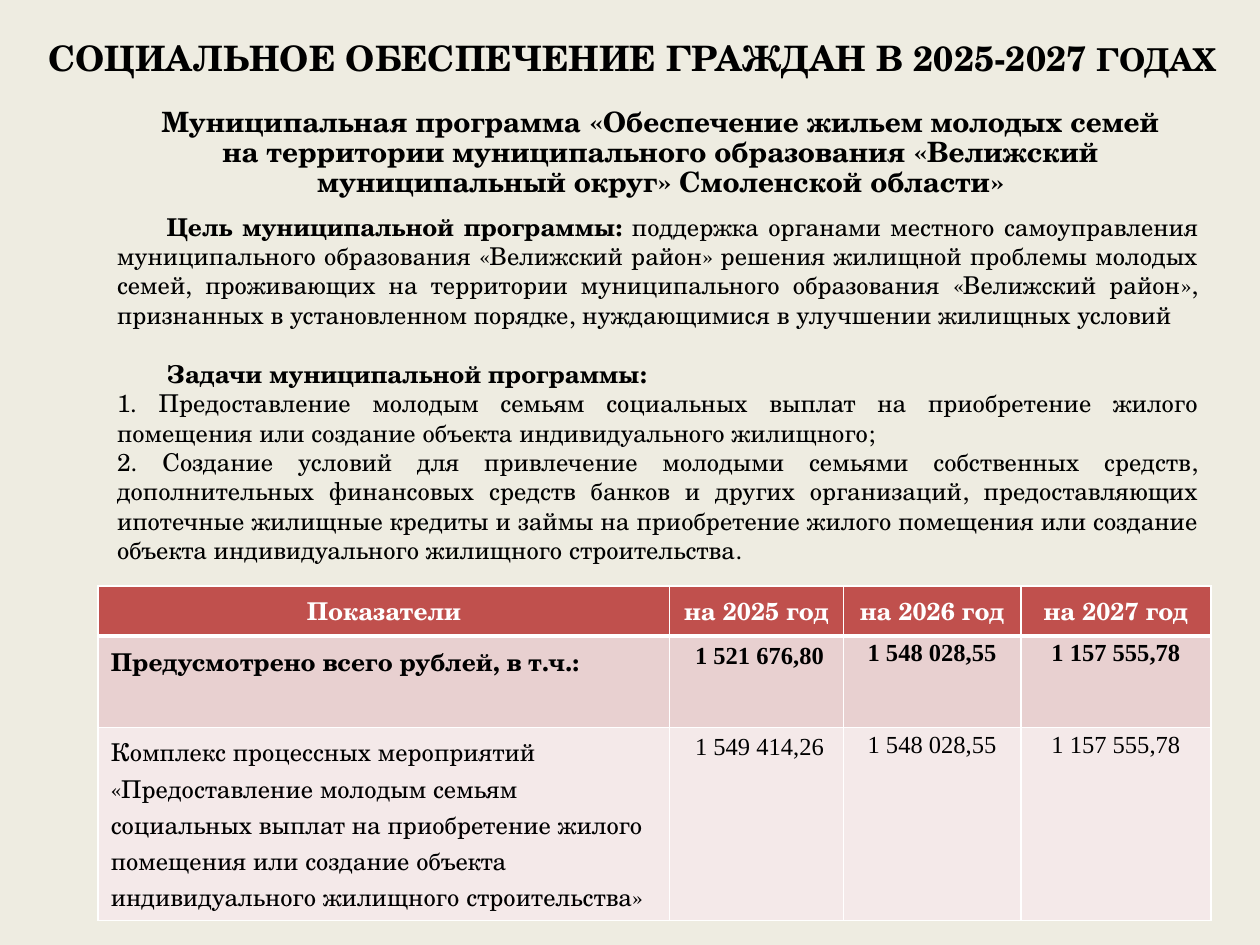
from lxml import etree
from pptx import Presentation
from pptx.dml.color import RGBColor
from pptx.enum import text
from pptx.oxml import ns
from pptx.util import Cm, Pt

BACKGROUND = RGBColor(0xEE, 0xEC, 0xE1)
BLACK = RGBColor(0, 0, 0)
WHITE = RGBColor(0xFF, 0xFF, 0xFF)
RED = RGBColor(0xC0, 0x50, 0x4D)
PINK = RGBColor(0xE8, 0xD0, 0xD0)
PALE_PINK = RGBColor(0xF4, 0xE9, 0xE9)

SERIF = "TeX Gyre Schola"
NUMERALS = "Times New Roman"
CENTER = text.PP_ALIGN.CENTER
JUSTIFY = text.PP_ALIGN.JUSTIFY
LEFT = text.PP_ALIGN.LEFT

GOAL = (
    "поддержка органами местного самоуправления муниципального образования "
    "«Велижский район» решения жилищной проблемы молодых семей, проживающих на "
    "территории муниципального образования «Велижский район», признанных в "
    "установленном порядке, нуждающимися в улучшении жилищных условий"
)
TASKS = [
    "1. Предоставление молодым семьям социальных выплат на приобретение жилого "
    "помещения или создание объекта индивидуального жилищного;",
    "2. Создание условий для привлечение молодыми семьями собственных средств, "
    "дополнительных финансовых средств банков и других организаций, "
    "предоставляющих ипотечные жилищные кредиты и займы на приобретение жилого "
    "помещения или создание объекта индивидуального жилищного строительства.",
]
COLUMN_WIDTHS = [11.52, 3.5, 3.58, 3.83]
ROW_HEIGHTS = [1.01, 1.85, 3.89]
ROW_FILLS = [RED, PINK, PALE_PINK]
BUDGET = [
    ["Показатели", "на 2025 год", "на 2026 год", "на 2027 год"],
    ["Предусмотрено всего рублей, в т.ч.:",
     " 1 521 676,80", "1 548 028,55", "1 157 555,78"],
    ["Комплекс процессных мероприятий «Предоставление молодым семьям "
     "социальных выплат на приобретение жилого помещения или создание объекта "
     "индивидуального жилищного строительства»",
     " 1 549 414,26", "1 548 028,55", "1 157 555,78"],
]


def add_span(para, words, size=14, bold=False, color=BLACK, font=SERIF):
    span = para.add_run()
    span.text = words
    span.font.size = Pt(size)
    span.font.bold = bold
    span.font.name = font
    span.font.color.rgb = color


def add_box(page, left, top, width, height, anchor):
    box = page.shapes.add_textbox(Cm(left), Cm(top), Cm(width), Cm(height))
    frame = box.text_frame
    frame.word_wrap = True
    frame.vertical_anchor = anchor
    return frame


def add_heading(page, place, anchor, spans):
    para = add_box(page, *place, anchor).paragraphs[0]
    para.alignment = CENTER
    para.line_spacing = 0.9
    for words, size in spans:
        add_span(para, words, size, bold=True)


def indent_first_line(para):
    para._p.get_or_add_pPr().set("indent", str(Cm(1)))


def add_program_text(page):
    frame = add_box(page, 2.11, 4.22, 22.3, 7.21, text.MSO_ANCHOR.MIDDLE)
    goal = frame.paragraphs[0]
    indent_first_line(goal)
    goal.space_after = Pt(16.8)
    add_span(goal, "Цель муниципальной программы: ", bold=True)
    add_span(goal, GOAL)

    tasks_title = frame.add_paragraph()
    indent_first_line(tasks_title)
    add_span(tasks_title, "Задачи муниципальной программы:", bold=True)
    for task in TASKS:
        add_span(frame.add_paragraph(), task)
    for para in frame.paragraphs:
        para.alignment = JUSTIFY


def set_borders(cell, bottom_width):
    """Draw white cell borders; call before the fill is set."""
    properties = cell._tc.get_or_add_tcPr()
    for side, width in (("L", 1), ("R", 1), ("T", 1), ("B", bottom_width)):
        line = etree.SubElement(properties, ns.qn(f"a:ln{side}"), w=str(Pt(width)))
        fill = etree.SubElement(line, ns.qn("a:solidFill"))
        etree.SubElement(fill, ns.qn("a:srgbClr"), val=str(WHITE))


def fill_cell(cell, words, row, column):
    is_header = row == 0
    is_number = row > 0 and column > 0
    set_borders(cell, 3 if is_header else 1)
    cell.fill.solid()
    cell.fill.fore_color.rgb = ROW_FILLS[row]

    para = cell.text_frame.paragraphs[0]
    para.alignment = CENTER if is_header or is_number else LEFT
    if is_number and column > 1:
        para.line_spacing = 1.15
        cell.margin_left = cell.margin_right = 0
        cell.margin_top = cell.margin_bottom = 0
    add_span(para, words, bold=row < 2, color=WHITE if is_header else BLACK,
             font=NUMERALS if is_number else SERIF)


def add_budget_table(page):
    frame = page.shapes.add_table(
        len(BUDGET), len(COLUMN_WIDTHS), Cm(1.98), Cm(11.81),
        Cm(sum(COLUMN_WIDTHS)), Cm(sum(ROW_HEIGHTS)))
    table = frame.table
    for column, width in zip(table.columns, COLUMN_WIDTHS):
        column.width = Cm(width)
    for row, height in zip(table.rows, ROW_HEIGHTS):
        row.height = Cm(height)
    for row, entries in enumerate(BUDGET):
        for column, words in enumerate(entries):
            fill_cell(table.cell(row, column), words, row, column)


def main():
    deck = Presentation()
    deck.slide_width, deck.slide_height = Cm(25.4), Cm(19.05)
    page = deck.slides.add_slide(deck.slide_layouts[6])
    page.background.fill.solid()
    page.background.fill.fore_color.rgb = BACKGROUND

    add_heading(page, (0.58, 0.71, 24.33, 1.27), text.MSO_ANCHOR.TOP, [
        ("СОЦИАЛЬНОЕ ОБЕСПЕЧЕНИЕ ГРАЖДАН В 2025-2027 ", 20), ("ГОДАХ", 18)])
    add_heading(page, (2.95, 1.85, 20.75, 2.49), text.MSO_ANCHOR.MIDDLE, [
        ("Муниципальная программа «Обеспечение жильем молодых семей на "
         "территории муниципального образования «Велижский муниципальный "
         "округ» Смоленской области»", 16)])
    add_program_text(page)
    add_budget_table(page)
    deck.save("out.pptx")


if __name__ == "__main__":
    main()
